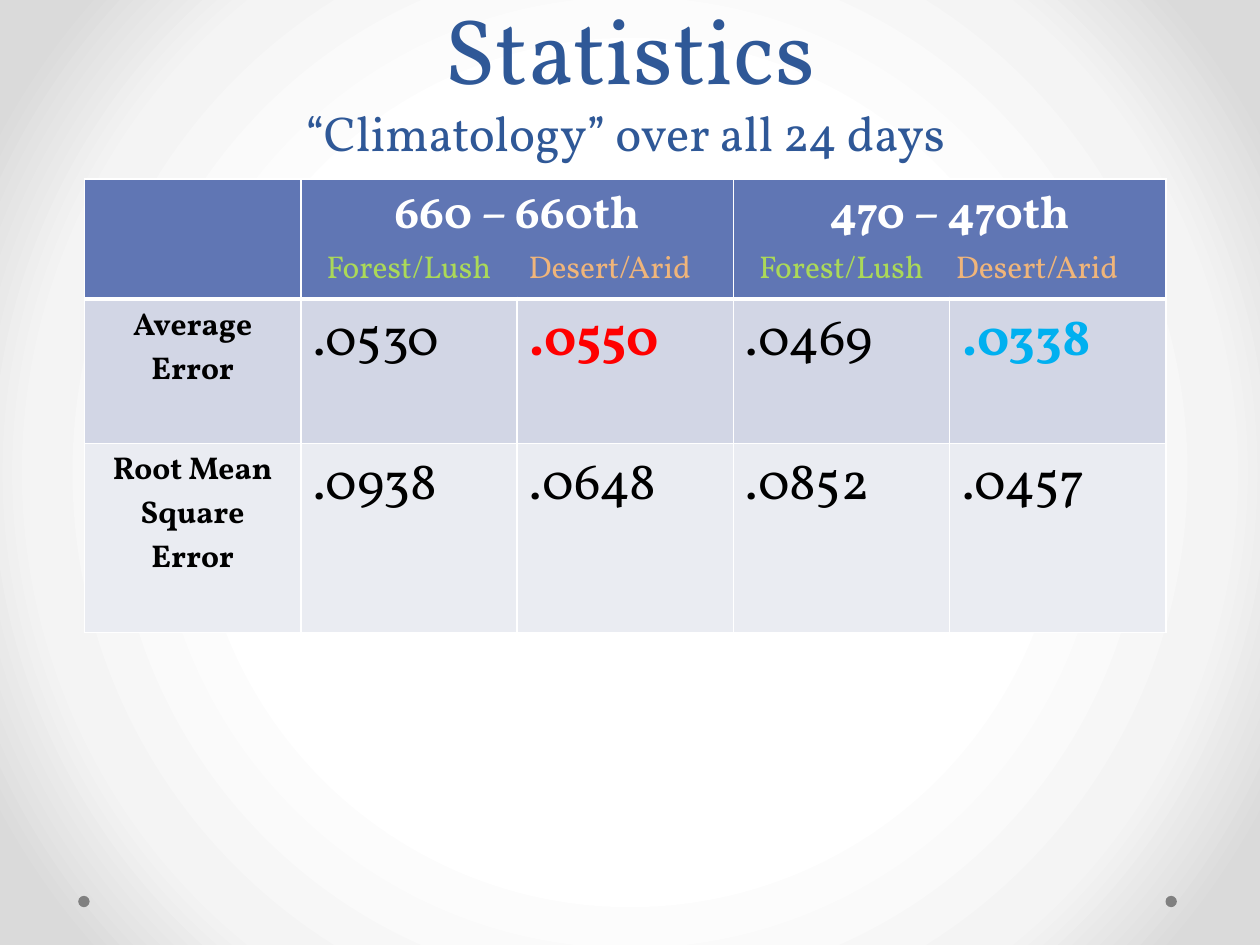
from lxml.etree import SubElement
from pptx import Presentation
from pptx.dml.color import RGBColor
from pptx.enum.shapes import MSO_SHAPE
from pptx.enum.text import MSO_ANCHOR, MSO_AUTO_SIZE, PP_ALIGN
from pptx.oxml import parse_xml
from pptx.oxml.ns import nsdecls, qn
from pptx.util import Pt

BLUE, HEADER, WHITE, BLACK = "2F5897", "6076B4", "FFFFFF", "000000"
GREEN, ORANGE, RED, CYAN = "ABD958", "F0B57A", "FF0000", "00B0F0"
COLUMN_WIDTH = 123.6


def color(value):
    return RGBColor.from_string(value)


class StatisticsSlide:
    font = "Vollkorn"

    def __init__(self, page):
        self.page = page

    def background(self, stops):
        self.page.background.fill.gradient()
        gradient = next(self.page.element.iter(qn("a:gradFill")))
        stop_xml = "".join(
            f'<a:gs pos="{percent * 1000}"><a:srgbClr val="{value}"/></a:gs>'
            for percent, value in stops)
        radial = parse_xml(
            f'<a:gradFill {nsdecls("a")} rotWithShape="1"><a:gsLst>{stop_xml}</a:gsLst>'
            '<a:path path="circle"><a:fillToRect l="50000" t="50000" r="50000" b="50000"/>'
            '</a:path></a:gradFill>')
        gradient.getparent().replace(gradient, radial)

    def span(self, para, text, size, value, bold=False):
        span = para.add_run()
        span.text = text
        span.font.name = self.font
        span.font.size = Pt(size)
        span.font.bold = bold
        span.font.color.rgb = color(value)

    def title(self, left, top, width, height, heading, subheading):
        box = self.page.shapes.title
        box.left, box.top, box.width, box.height = map(Pt, (left, top, width, height))
        frame = box.text_frame
        frame.word_wrap = True
        frame.auto_size = MSO_AUTO_SIZE.NONE
        frame.vertical_anchor = MSO_ANCHOR.BOTTOM
        para = frame.paragraphs[0]
        para.alignment = PP_ALIGN.CENTER
        self.span(para, heading, 53, BLUE)
        para.add_line_break()
        self.span(para, subheading, 28, BLUE)

    def dot(self, left, top, size):
        dot = self.page.shapes.add_shape(
            MSO_SHAPE.OVAL, Pt(left), Pt(top), Pt(size), Pt(size))
        dot.shadow.inherit = False
        dot.fill.solid()
        dot.fill.fore_color.rgb = color("808080")
        dot.line.fill.background()

    def table(self, left, top, column_count, row_heights):
        frame = self.page.shapes.add_table(
            len(row_heights), column_count, Pt(left), Pt(top),
            Pt(COLUMN_WIDTH * column_count), Pt(sum(row_heights)))
        table = frame.table
        for column in table.columns:
            column.width = Pt(COLUMN_WIDTH)
        for row, height in zip(table.rows, row_heights):
            row.height = Pt(height)
        return table

    def style_cell(self, cell, fill, top_width, bottom_width):
        properties = cell._tc.get_or_add_tcPr()
        widths = {"a:lnL": 1, "a:lnR": 1, "a:lnT": top_width, "a:lnB": bottom_width}
        for tag, width in widths.items():
            line = SubElement(properties, qn(tag), w=str(Pt(width)))
            solid = SubElement(line, qn("a:solidFill"))
            SubElement(solid, qn("a:srgbClr"), val=WHITE)
        cell.fill.solid()
        cell.fill.fore_color.rgb = color(fill)

    def cell_text(self, cell, text, size, value, bold=False, align=PP_ALIGN.LEFT):
        para = cell.text_frame.paragraphs[0]
        para.alignment = align
        self.span(para, text, size, value, bold)

    def group_header(self, cell, heading, desert_tab):
        self.cell_text(cell, heading, 26, WHITE, True, PP_ALIGN.CENTER)
        para = cell.text_frame.add_paragraph()
        para.alignment = PP_ALIGN.LEFT
        tabs = SubElement(para._p.get_or_add_pPr(), qn("a:tabLst"))
        for position in (7.5, desert_tab):
            SubElement(tabs, qn("a:tab"), pos=str(Pt(position)), algn="l")
        self.span(para, "\tForest/Lush", 18, GREEN)
        self.span(para, "\tDesert/Arid", 18, ORANGE)


def main():
    deck = Presentation()
    deck.slide_width, deck.slide_height = Pt(720), Pt(540)
    page = deck.slides.add_slide(deck.slide_layouts[5])
    slide = StatisticsSlide(page)

    # Background, corner dots and title
    slide.background([(50, "FFFFFF"), (76, "F4F4F4"), (92, "DADADA")])
    for left in (666, 44.7):
        slide.dot(left, 511.9, 6.5)
    slide.title(54, 24, 612, 72, "Statistics", "“Climatology” over all 24 days ")

    # Table grid
    table = slide.table(48.3, 102.2, 5, [68, 82.5, 108])
    fills = [HEADER, "D2D6E5", "EAECF2"]
    for row, fill in enumerate(fills):
        for column in range(5):
            slide.style_cell(table.cell(row, column), fill,
                             3 if row == 1 else 1, 3 if row == 0 else 1)

    # Group headers, each over two columns
    groups = [(1, "660 – 660th", 123), (3, "470 – 470th", 120)]
    for column, heading, desert_tab in groups:
        cell = table.cell(0, column)
        cell.merge(table.cell(0, column + 1))
        slide.group_header(cell, heading, desert_tab)

    # Error values, with the highest and lowest average marked
    errors = [
        ("Average Error", [".0530", ".0550", ".0469", ".0338"]),
        ("Root Mean Square Error", [".0938", ".0648", ".0852", ".0457"]),
    ]
    marked = {".0550": RED, ".0338": CYAN}
    for row, (label, values) in enumerate(errors, 1):
        slide.cell_text(table.cell(row, 0), label, 18, BLACK, True, PP_ALIGN.CENTER)
        for column, value in enumerate(values, 1):
            slide.cell_text(table.cell(row, column), value, 30,
                            marked.get(value, BLACK), value in marked)

    deck.save("out.pptx")


if __name__ == "__main__":
    main()
